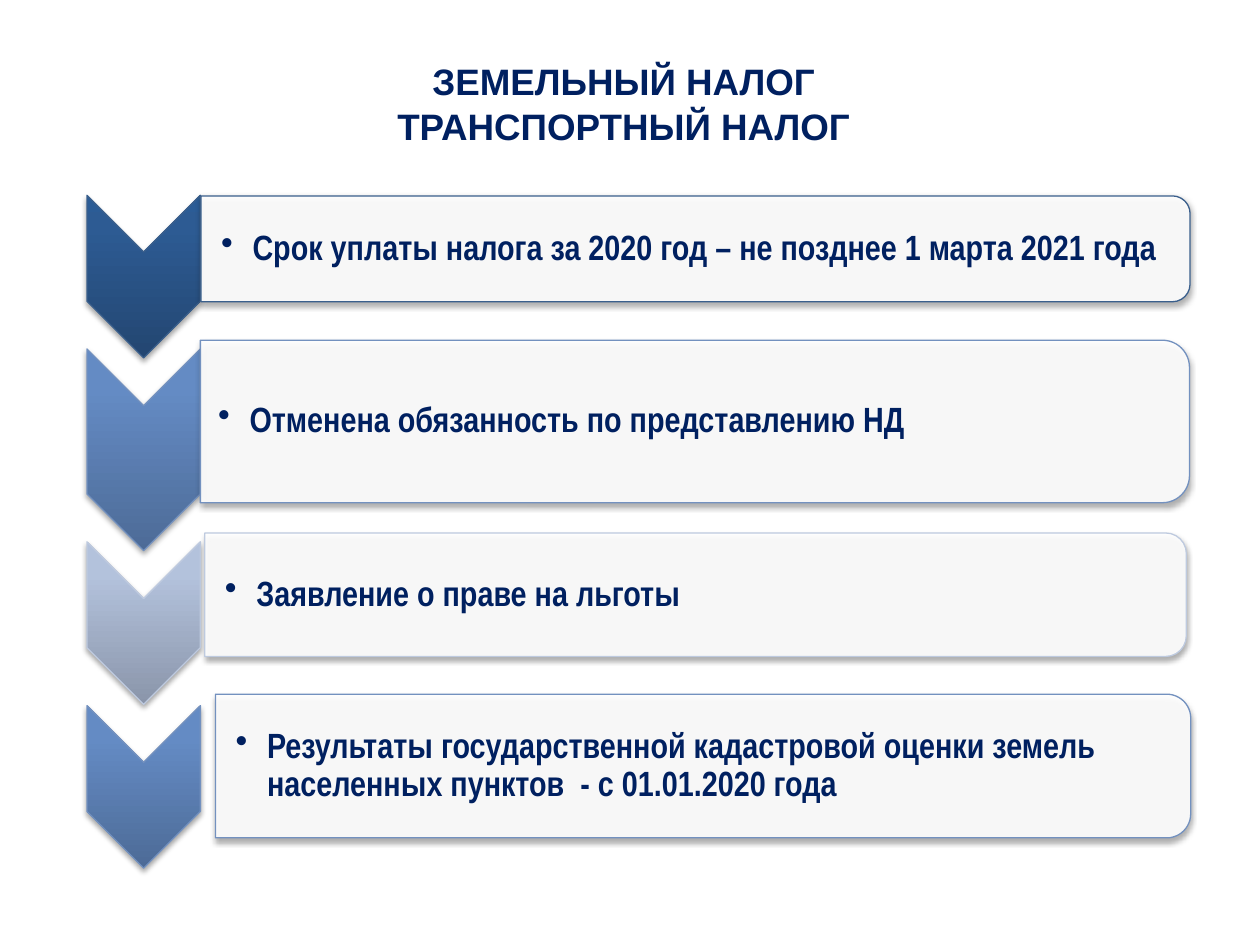
from lxml import etree
from pptx import Presentation
from pptx import util as u
from pptx.dml.color import RGBColor
from pptx.enum import shapes, text
from pptx.oxml import parse_xml
from pptx.oxml.ns import nsdecls, qn

NAVY = RGBColor(0x00, 0x20, 0x60)
WHITE = RGBColor(0xFF, 0xFF, 0xFF)
DARK = [RGBColor(0x23, 0x46, 0x71), RGBColor(0x2D, 0x5B, 0x93), RGBColor(0x2B, 0x5C, 0x96)]
MIDDLE = [RGBColor(0x4D, 0x6B, 0x97), RGBColor(0x64, 0x8B, 0xC4), RGBColor(0x63, 0x8B, 0xC7)]
PALE = [RGBColor(0x8A, 0x95, 0xAA), RGBColor(0xB3, 0xC2, 0xDC), RGBColor(0xB4, 0xC3, 0xDE)]
DARK_LINE = RGBColor(0x3A, 0x5F, 0x8C)
MIDDLE_LINE = RGBColor(0x73, 0x91, 0xBF)
PALE_LINE = RGBColor(0xBE, 0xCA, 0xDF)

deck = Presentation()
deck.slide_width, deck.slide_height = u.Inches(10), u.Inches(7.5)
column = deck.slide_width / 100
row = deck.slide_height / 75
page = deck.slides.add_slide(deck.slide_layouts[5])


def add_turned(kind, left, top, width, height, line):
    middle_x, middle_y = (left + width / 2) * column, (top + height / 2) * row
    long, short = int(height * row), int(width * column)
    shape = page.shapes.add_shape(
        kind, int(middle_x - long / 2), int(middle_y - short / 2), long, short)
    shape.rotation = 90
    shape.line.color.rgb = line
    shape.line.width = u.Pt(0.75)
    shape.fill.solid()
    shape.fill.fore_color.rgb = WHITE
    shape.shadow.inherit = False
    effects = shape._element.spPr.find(qn("a:effectLst"))
    effects.append(parse_xml(
        f'<a:outerShdw {nsdecls("a")} blurRad="40000" dist="23000" dir="5400000" '
        'rotWithShape="0"><a:srgbClr val="000000"><a:alpha val="35000"/>'
        '</a:srgbClr></a:outerShdw>'))
    return shape


def add_span(para, words, font, size):
    span = para.add_run()
    span.text = words
    span.font.name = font
    span.font.size = u.Pt(size)
    span.font.bold = True
    span.font.color.rgb = NAVY


title = page.shapes.title
title.left, title.top = int(7.6 * column), int(3.9 * row)
title.width, title.height = int(83.8 * column), int(8.6 * row)
title.text_frame.vertical_anchor = text.MSO_ANCHOR.MIDDLE
para = title.text_frame.paragraphs[0]
para.alignment = text.PP_ALIGN.CENTER
add_span(para, "ЗЕМЕЛЬНЫЙ НАЛОГ", "Arial", 21)
para.add_line_break()
add_span(para, "ТРАНСПОРТНЫЙ НАЛОГ", "Arial", 21)

items = [
    ("Срок уплаты налога за 2020 год – не позднее 1 марта 2021 года",
     DARK, DARK_LINE, 15.5, 12.9, 15.95, 15.55, 78.5, 8.4, 0.16),
    ("Отменена обязанность по представлению НД",
     MIDDLE, MIDDLE_LINE, 27.7, 16, 15.9, 27, 78.5, 12.9, 0.14),
    ("Заявление о праве на льготы",
     PALE, PALE_LINE, 43, 12.9, 16.25, 42.3, 77.9, 9.8, 0.16),
    ("Результаты государственной кадастровой оценки земель населенных пунктов  - с 01.01.2020 года",
     MIDDLE, MIDDLE_LINE, 56, 12.9, 17.1, 55.1, 77.4, 11.4, 0.16),
]

for words, shades, line, arrow_top, arrow_height, left, top, width, height, inset in items:
    arrow = add_turned(shapes.MSO_SHAPE.CHEVRON, 6.9, arrow_top, 9, arrow_height, line)
    stops = "".join(f'<a:gs pos="{place}"><a:srgbClr val="{shade}"/></a:gs>'
                    for place, shade in zip((0, 80000, 100000), shades))
    plain = arrow._element.spPr.find(qn("a:solidFill"))
    plain.getparent().replace(plain, parse_xml(
        f'<a:gradFill {nsdecls("a")} rotWithShape="0"><a:gsLst>{stops}</a:gsLst>'
        '<a:lin ang="16200000" scaled="0"/></a:gradFill>'))

    panel = add_turned(shapes.MSO_SHAPE.ROUND_2_SAME_RECTANGLE, left, top, width, height, line)
    white = panel._element.spPr.find(qn("a:solidFill"))[0]
    etree.SubElement(white, qn("a:alpha")).set("val", "90000")

    edge = height * 0.05
    box = page.shapes.add_textbox(
        int(left * column), int((top + edge) * row),
        int((width - edge) * column), int((height - 2 * edge) * row))
    frame = box.text_frame
    frame.word_wrap = True
    frame.vertical_anchor = text.MSO_ANCHOR.MIDDLE
    frame.margin_left = u.Inches(inset)
    frame.margin_top = frame.margin_right = frame.margin_bottom = u.Inches(0.01)
    para = frame.paragraphs[0]
    para.line_spacing = 0.9
    add_span(para, words, "Arial Narrow", 20)
    settings = para._p.get_or_add_pPr()
    settings.set("marL", str(u.Inches(0.25)))
    settings.set("indent", str(-u.Inches(0.25)))
    etree.SubElement(settings, qn("a:buChar")).set("char", "•")

deck.save("out.pptx")
